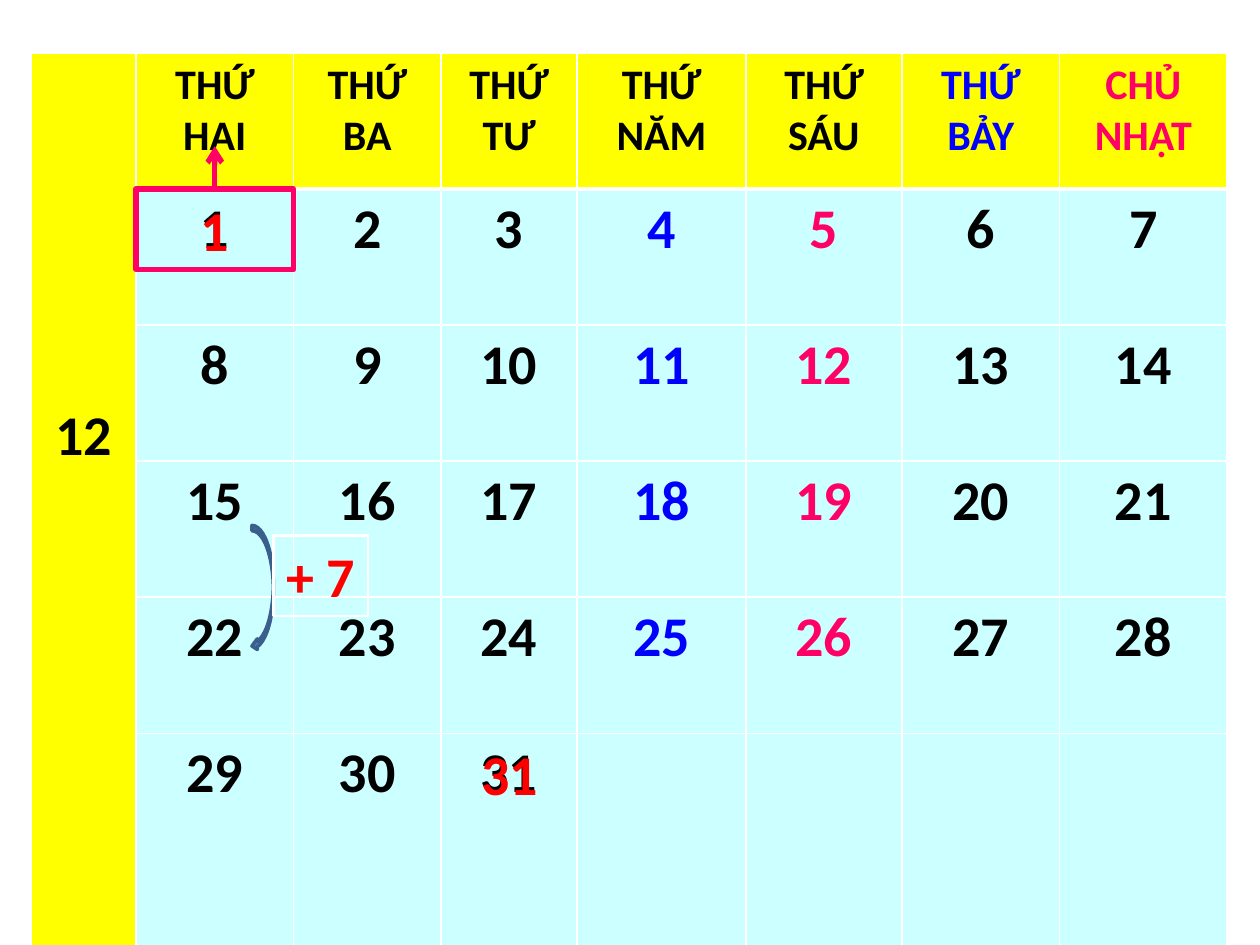
import pptx
import pptx.dml.color
import pptx.enum.shapes
import pptx.enum.text
import pptx.oxml
import pptx.oxml.ns
import pptx.util
from dataclasses import dataclass
from pptx.util import Inches, Pt


@dataclass(frozen=True)
class Theme:
    font: str = "Calibri"
    header_size: int = 24
    day_size: int = 32
    black: str = "000000"
    white: str = "FFFFFF"
    yellow: str = "FFFF00"
    cyan: str = "CCFFFF"
    blue: str = "0000FF"
    pink: str = "FF0066"
    red: str = "FF0000"
    arrow_fill: str = "4F81BD"
    arrow_line: str = "3A5F8C"


THEME = Theme()
WEEKDAYS = ["THỨ HAI", "THỨ BA", "THỨ TƯ", "THỨ NĂM", "THỨ SÁU", "THỨ BẢY", "CHỦ NHẬT"]
HEADER_COLORS = {5: THEME.blue, 6: THEME.pink}
DAY_COLORS = {3: THEME.blue, 4: THEME.pink}
MONTH = "12"
LAST_DAY = 31
COLUMN_WIDTHS = [0.83, 1.25, 1.17, 1.08, 1.34, 1.24, 1.25, 1.33]
ROW_HEIGHTS = [1.08] * 5 + [1.67]
BOX_HEIGHT = 0.64


def color(value):
    return pptx.dml.color.RGBColor.from_string(value)


def write(text_frame, text, size, text_color):
    paragraph = text_frame.paragraphs[0]
    paragraph.text = text
    paragraph.alignment = pptx.enum.text.PP_ALIGN.CENTER
    font = paragraph.font
    font.name, font.size, font.bold = THEME.font, Pt(size), True
    font.color.rgb = color(text_color)


def style_cell(cell, fill, top=1, bottom=1):
    """Give a cell white borders, with widths in points, and a plain fill."""
    properties = cell._tc.get_or_add_tcPr()
    for side, width in (("L", 1), ("R", 1), ("T", top), ("B", bottom)):
        properties.append(pptx.oxml.parse_xml(
            f'<a:ln{side} {pptx.oxml.ns.nsdecls("a")} w="{Pt(width)}"><a:solidFill>'
            f'<a:srgbClr val="{THEME.white}"/></a:solidFill></a:ln{side}>'))
    cell.fill.solid()
    cell.fill.fore_color.rgb = color(fill)


def add_calendar(slide, left, top):
    rows, columns = len(ROW_HEIGHTS), len(COLUMN_WIDTHS)
    table = slide.shapes.add_table(
        rows, columns, Inches(left), Inches(top),
        Inches(sum(COLUMN_WIDTHS)), Inches(sum(ROW_HEIGHTS))).table
    table.horz_banding = False
    for column, width in zip(table.columns, COLUMN_WIDTHS):
        column.width = Inches(width)
    for row, height in zip(table.rows, ROW_HEIGHTS):
        row.height = Inches(height)

    for row in range(rows):
        style_cell(table.cell(row, 0), THEME.yellow)
    month = table.cell(0, 0)
    month.merge(table.cell(rows - 1, 0))
    month.margin_top = Inches(2.77)
    write(month.text_frame, MONTH, THEME.day_size, THEME.black)

    for weekday, name in enumerate(WEEKDAYS):
        header = table.cell(0, weekday + 1)
        style_cell(header, THEME.yellow, bottom=3)
        write(header.text_frame, name, THEME.header_size,
              HEADER_COLORS.get(weekday, THEME.black))
        for week in range(rows - 1):
            cell = table.cell(week + 1, weekday + 1)
            style_cell(cell, THEME.cyan, top=1 if week else 3)
            day = week * len(WEEKDAYS) + weekday + 1
            if day <= LAST_DAY:
                write(cell.text_frame, str(day), THEME.day_size,
                      DAY_COLORS.get(weekday, THEME.black))


def add_red_label(slide, text, left, top, width):
    box = slide.shapes.add_textbox(
        Inches(left), Inches(top), Inches(width), Inches(BOX_HEIGHT))
    box.text_frame.word_wrap = True
    write(box.text_frame, text, THEME.day_size, THEME.red)


def add_framed_label(slide, text, left, top, width, line_color, line_width):
    frame = slide.shapes.add_shape(
        pptx.enum.shapes.MSO_SHAPE.RECTANGLE,
        Inches(left), Inches(top), Inches(width), Inches(BOX_HEIGHT))
    frame.shadow.inherit = False
    frame.fill.background()
    frame.line.color.rgb = color(line_color)
    frame.line.width = Pt(line_width)
    frame.text_frame.word_wrap = True
    frame.text_frame.vertical_anchor = pptx.enum.text.MSO_ANCHOR.TOP
    write(frame.text_frame, text, THEME.day_size, THEME.red)


def add_up_arrow(slide, x, bottom, top):
    arrow = slide.shapes.add_connector(
        pptx.enum.shapes.MSO_CONNECTOR.STRAIGHT,
        Inches(x), Inches(bottom), Inches(x), Inches(top))
    arrow.line.color.rgb = color(THEME.pink)
    arrow.line.width = Pt(3)
    namespace = pptx.oxml.ns.nsdecls("a")
    arrow.line._get_or_add_ln().append(
        pptx.oxml.parse_xml(f'<a:tailEnd {namespace} type="arrow"/>'))
    arrow._element.spPr.append(pptx.oxml.parse_xml(f"<a:effectLst {namespace}/>"))


def add_week_arrow(slide, left, top, width, height):
    arrow = slide.shapes.add_shape(
        pptx.enum.shapes.MSO_SHAPE.CURVED_LEFT_ARROW,
        Inches(left), Inches(top), Inches(width), Inches(height))
    arrow.shadow.inherit = False
    arrow.fill.solid()
    arrow.fill.fore_color.rgb = color(THEME.arrow_fill)
    arrow.line.color.rgb = color(THEME.arrow_line)
    arrow.line.width = Pt(2)


def add_calendar_slide(presentation):
    slide = presentation.slides.add_slide(presentation.slide_layouts[6])
    left, top = 0.25, 0.42
    add_calendar(slide, left, top)

    first_left = left + COLUMN_WIDTHS[0]
    first_top = top + ROW_HEIGHTS[0]
    first_width = COLUMN_WIDTHS[1]
    add_red_label(slide, str(LAST_DAY), 3.42, 5.82, 1.25)
    add_framed_label(slide, "1", first_left, first_top, first_width, THEME.pink, 3)
    add_up_arrow(slide, first_left + first_width / 2, first_top, 1.16)
    add_week_arrow(slide, 2, 4.17, 0.17, 1)
    add_framed_label(slide, "+ 7", 2.17, 4.25, 0.75, THEME.white, 1.5)


def main():
    presentation = pptx.Presentation()
    presentation.slide_width = Inches(10)
    presentation.slide_height = Inches(7.5)
    add_calendar_slide(presentation)
    presentation.save("out.pptx")


if __name__ == "__main__":
    main()
